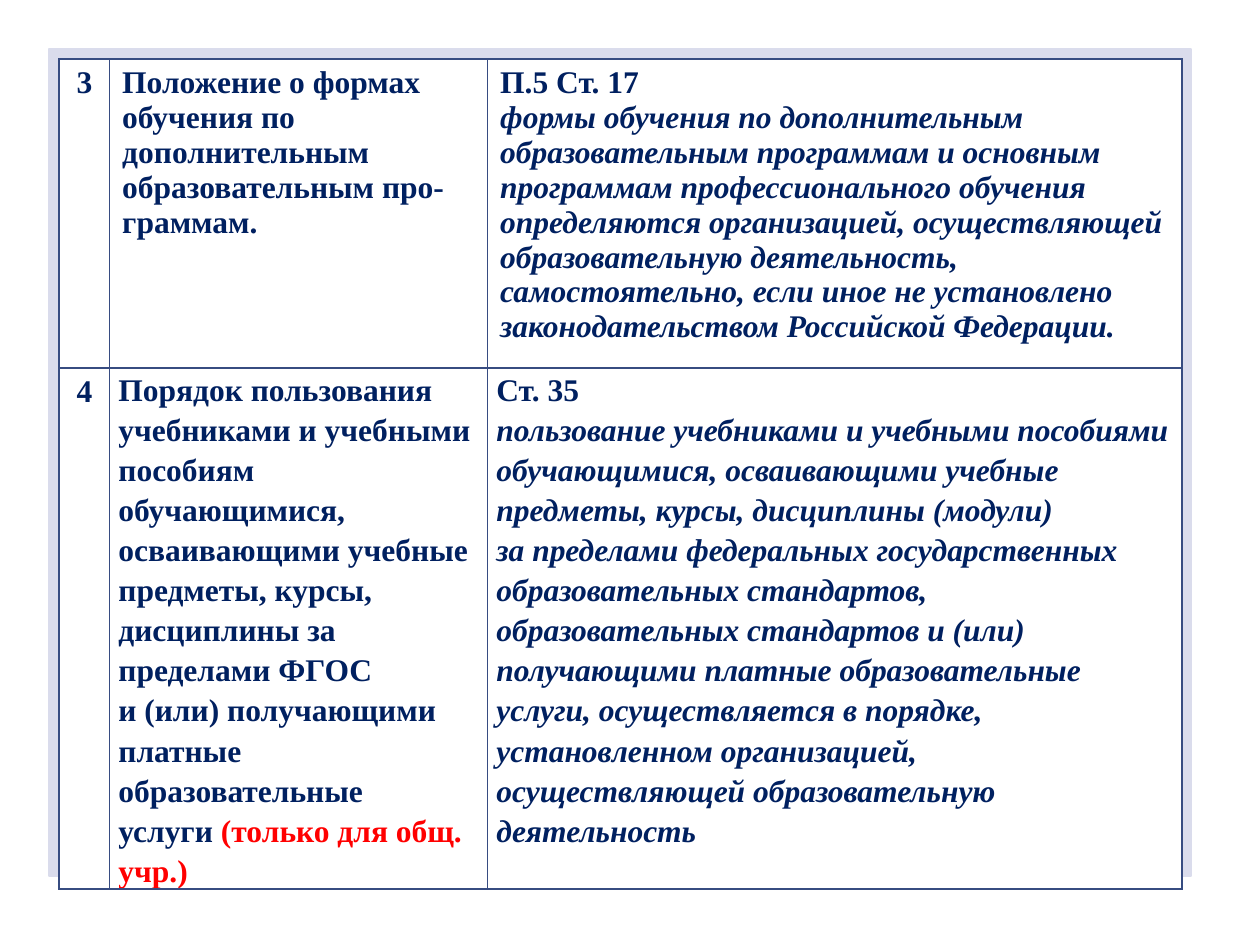
import pptx
import pptx.dml.color
import pptx.enum.shapes
import pptx.enum.text
import pptx.oxml
import pptx.oxml.ns
import pptx.util
from pptx.util import Inches

FONT = "Times New Roman"
NAVY, RED, WHITE = "002060", "FF0000", "FFFFFF"
BACKDROP, BORDER = "DADCEC", "374C81"

COLUMN_WIDTHS = [0.4, 3, 5.51]
# Each row: height, line spacing, side inset, top inset of the text cells,
# number, document title paragraphs, legal basis paragraphs (the first is upright)
ROWS = [
    (2.45, 1.0, 0.1, 0.05, "3",
     ["Положение о формах обучения по дополнительным",
      "образовательным про-",
      "граммам."],
     ["П.5 Ст. 17",
      "формы обучения по дополнительным образовательным программам и основным "
      "программам профессионального обучения",
      "определяются организацией, осуществляющей образовательную деятельность, "
      "самостоятельно, если иное не установлено",
      "законодательством Российской Федерации."]),
    (4.03, 1.15, 0.07, 0, "4",
     ["Порядок пользования",
      "учебниками и учебными",
      "пособиям обучающимися,",
      "осваивающими учебные",
      "предметы, курсы, дисциплины за пределами ФГОС",
      "и (или) получающими",
      "платные образовательные",
      "услуги "],
     ["Ст. 35",
      "пользование учебниками и учебными пособиями обучающимися, осваивающими "
      "учебные предметы, курсы, дисциплины (модули)",
      "за пределами федеральных государственных образовательных стандартов, "
      "образовательных стандартов и (или) получающими платные образовательные "
      "услуги, осуществляется в порядке, установленном организацией, "
      "осуществляющей образовательную деятельность"]),
]
RED_REMARK = "(только для общ. учр.)"


def rgb(value):
    return pptx.dml.color.RGBColor.from_string(value)


def add_borders(cell):
    """Draw a 1 pt line on all four sides; must come before the cell fill."""
    properties = cell._tc.get_or_add_tcPr()
    for side in ("lnL", "lnR", "lnT", "lnB"):
        properties.append(pptx.oxml.parse_xml(
            f'<a:{side} {pptx.oxml.ns.nsdecls("a")} w="12700"><a:solidFill>'
            f'<a:srgbClr val="{BORDER}"/></a:solidFill></a:{side}>'))


def fill_cell(cell, texts, line_spacing=1.0, italic_tail=False, centred=False):
    add_borders(cell)
    cell.fill.solid()
    cell.fill.fore_color.rgb = rgb(WHITE)
    frame = cell.text_frame
    for index, text in enumerate(texts):
        paragraph = frame.add_paragraph() if index else frame.paragraphs[0]
        paragraph.add_run().text = text
        paragraph.line_spacing = line_spacing
        if centred:
            paragraph.alignment = pptx.enum.text.PP_ALIGN.CENTER
        paragraph.font.name = FONT
        paragraph.font.size = pptx.util.Pt(18)
        paragraph.font.bold = True
        paragraph.font.italic = italic_tail and index > 0
        paragraph.font.color.rgb = rgb(NAVY)


presentation = pptx.Presentation()
presentation.slide_width, presentation.slide_height = Inches(10), Inches(7.5)
slide = presentation.slides.add_slide(presentation.slide_layouts[6])

backdrop = slide.shapes.add_shape(
    pptx.enum.shapes.MSO_SHAPE.FLOWCHART_PROCESS,
    Inches(0.39), Inches(0.39), Inches(9.06), Inches(6.56))
backdrop.shadow.inherit = False
backdrop.fill.solid()
backdrop.fill.fore_color.rgb = rgb(BACKDROP)
backdrop.line.color.rgb = rgb(BACKDROP)
backdrop.line.width = pptx.util.Pt(1)

table = slide.shapes.add_table(
    len(ROWS), len(COLUMN_WIDTHS), Inches(0.47), Inches(0.47),
    Inches(sum(COLUMN_WIDTHS)), Inches(sum(row[0] for row in ROWS))).table
table.first_row = table.horz_banding = False
for column, width in zip(table.columns, COLUMN_WIDTHS):
    column.width = Inches(width)

for index, (height, spacing, side, top, number, title, basis) in enumerate(ROWS):
    table.rows[index].height = Inches(height)
    number_cell, title_cell, basis_cell = table.rows[index].cells
    fill_cell(number_cell, [number], centred=True)
    fill_cell(title_cell, title, spacing)
    fill_cell(basis_cell, basis, spacing, italic_tail=True)
    for cell in (title_cell, basis_cell):
        cell.margin_left = cell.margin_right = Inches(side)
        cell.margin_top = cell.margin_bottom = Inches(top)

remark = table.cell(1, 1).text_frame.paragraphs[-1].add_run()
remark.text = RED_REMARK
remark.font.color.rgb = rgb(RED)

presentation.save("out.pptx")
